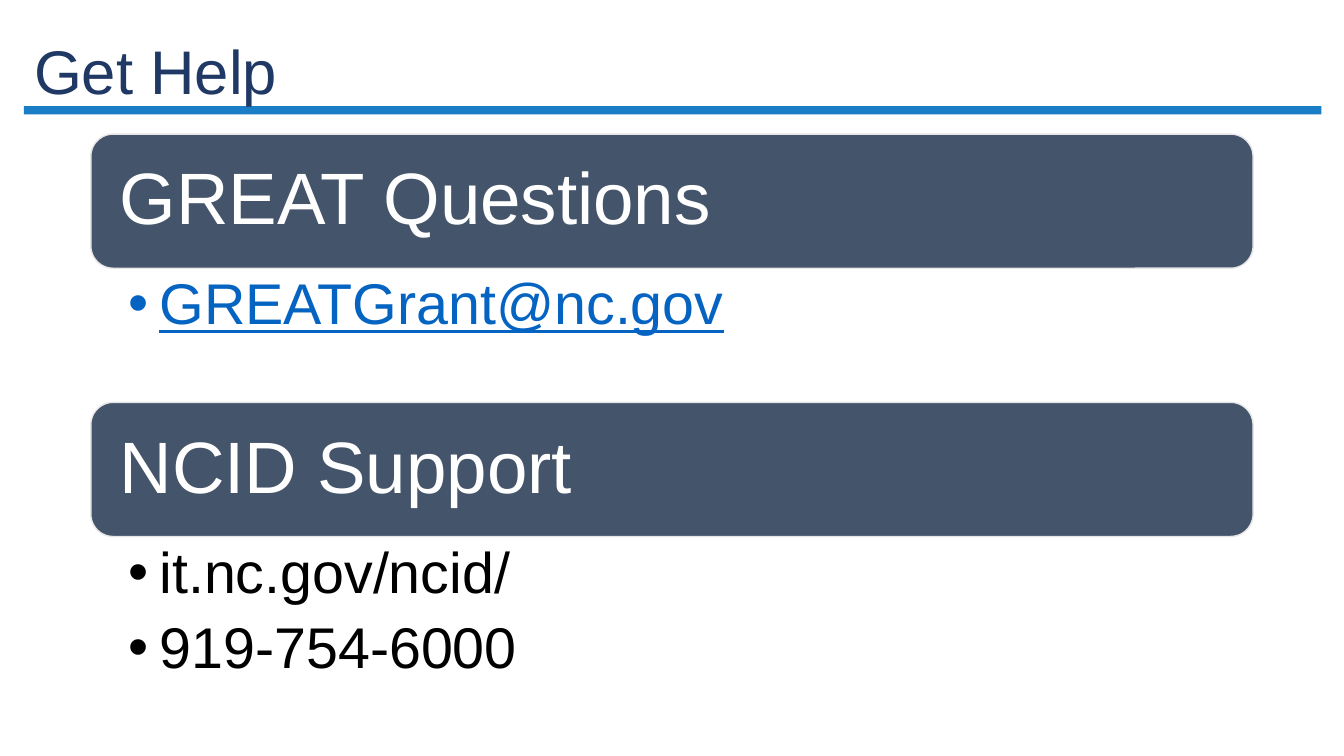
from dataclasses import dataclass

from lxml import etree
from pptx import Presentation
from pptx.dml.color import RGBColor
from pptx.enum.shapes import MSO_CONNECTOR, MSO_SHAPE
from pptx.enum.text import MSO_ANCHOR, PP_ALIGN
from pptx.oxml.ns import qn
from pptx.util import Cm, Pt

FONT = "Arial"
LEFT, WIDTH = 2.29, 29.29
TOP, BAR_HEIGHT, PITCH = 3.38, 3.38, 6.76


@dataclass
class HelpSection:
    heading: str
    contacts: list[str]
    color: str
    list_height: float
    underline: bool = False


SECTIONS = [
    HelpSection("GREAT Questions", ["GREATGrant@nc.gov"], "0563C1", 3.36, True),
    HelpSection("NCID Support", ["it.nc.gov/ncid/", "919-754-6000"], "000000", 5.54),
]


def rgb(color: str) -> RGBColor:
    return RGBColor.from_string(color)


def set_insets(tf, left: float, top: float, right: float) -> None:
    tf.margin_left, tf.margin_right = Cm(left), Cm(right)
    tf.margin_top = tf.margin_bottom = Cm(top)


def add_run(p, text: str, size: float, color: str, underline: bool = False) -> None:
    p.alignment = PP_ALIGN.LEFT
    p.line_spacing = 0.9
    r = p.add_run()
    r.text = text
    r.font.name = FONT
    r.font.size = Pt(size)
    r.font.color.rgb = rgb(color)
    if underline:
        r.font.underline = True


def add_bullet(p) -> None:
    pPr = p._p.get_or_add_pPr()
    pPr.set("marL", str(Cm(0.79)))
    pPr.set("indent", str(-Cm(0.79)))
    etree.SubElement(pPr, qn("a:buFont")).set("typeface", FONT)
    etree.SubElement(pPr, qn("a:buChar")).set("char", "•")


def add_rule(s) -> None:
    rule = s.shapes.add_connector(
        MSO_CONNECTOR.STRAIGHT, Cm(0.6), Cm(2.78), Cm(33.3), Cm(2.78))
    rule.line.width = Pt(6)
    rule.line.color.rgb = rgb("0070C0")
    color = rule._element.spPr.find(".//" + qn("a:srgbClr"))
    etree.SubElement(color, qn("a:alpha")).set("val", "90000")
    etree.SubElement(rule._element.spPr, qn("a:effectLst"))


def add_title(s, text: str) -> None:
    sp = s.shapes.add_textbox(Cm(0.61), Cm(0.94), Cm(30.91), Cm(1.88))
    tf = sp.text_frame
    tf.word_wrap = True
    tf.vertical_anchor = MSO_ANCHOR.MIDDLE
    add_run(tf.paragraphs[0], text, 44, "203864")


def add_section(s, section: HelpSection, top: float) -> None:
    # Heading bar
    sp = s.shapes.add_shape(
        MSO_SHAPE.ROUNDED_RECTANGLE, Cm(LEFT), Cm(top), Cm(WIDTH), Cm(BAR_HEIGHT))
    sp.shadow.inherit = False
    sp.fill.solid()
    sp.fill.fore_color.rgb = rgb("44546A")
    sp.line.color.rgb = rgb("E7E6E6")
    sp.line.width = Pt(1)
    tf = sp.text_frame
    tf.word_wrap = True
    tf.vertical_anchor = MSO_ANCHOR.MIDDLE
    set_insets(tf, 0.56, 0.56, 0.56)
    add_run(tf.paragraphs[0], section.heading, 52, "FFFFFF")

    # Contact list
    sp = s.shapes.add_textbox(
        Cm(LEFT), Cm(top + BAR_HEIGHT), Cm(WIDTH), Cm(section.list_height))
    tf = sp.text_frame
    tf.word_wrap = True
    set_insets(tf, 0.94, 0.18, 1.02)
    for i, contact in enumerate(section.contacts):
        p = tf.add_paragraph() if i else tf.paragraphs[0]
        add_bullet(p)
        p.space_after = Pt(9.5)
        add_run(p, contact, 41, section.color, section.underline)


def main() -> None:
    prs = Presentation()
    prs.slide_width, prs.slide_height = Cm(33.87), Cm(19.05)
    s = prs.slides.add_slide(prs.slide_layouts[6])
    add_rule(s)
    add_title(s, "Get Help")
    for i, section in enumerate(SECTIONS):
        add_section(s, section, TOP + i * PITCH)
    prs.save("out.pptx")


if __name__ == "__main__":
    main()
